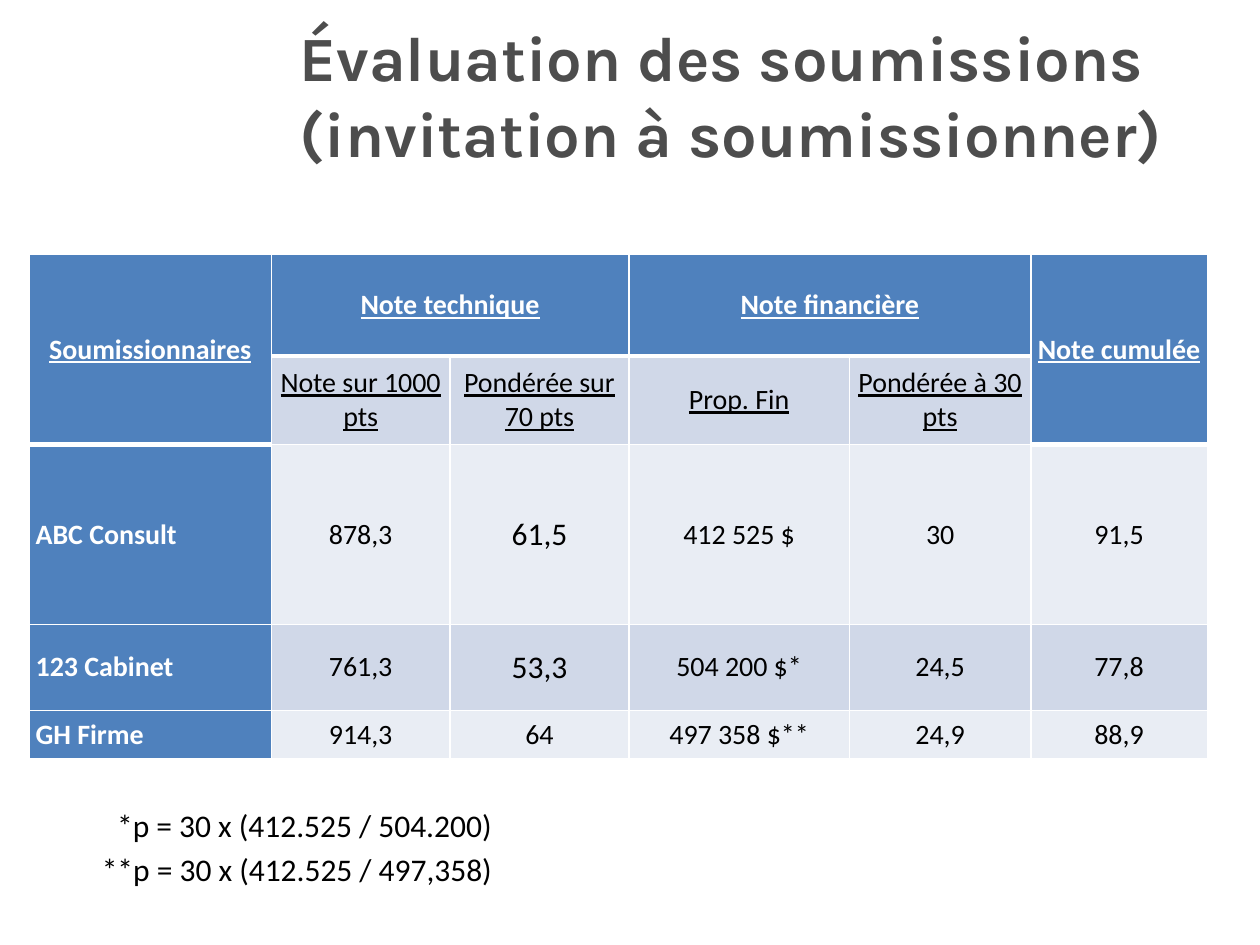
from pptx import Presentation
from pptx.dml.color import RGBColor
from pptx.enum.text import MSO_ANCHOR, MSO_AUTO_SIZE, PP_ALIGN
from pptx.oxml import parse_xml
from pptx.oxml.ns import nsdecls
from pptx.util import Pt

WHITE = RGBColor(0xFF, 0xFF, 0xFF)
BLACK = RGBColor(0x00, 0x00, 0x00)
GREY = RGBColor(0x4D, 0x4D, 0x4D)
BLUE = RGBColor(0x4F, 0x81, 0xBD)
BAND_DARK = RGBColor(0xD0, 0xD8, 0xE8)
BAND_LIGHT = RGBColor(0xE9, 0xED, 0xF4)

COLUMN_WIDTHS = (138.2, 102.2, 102.2, 126, 103.7, 100.8)
ROW_HEIGHTS = (58, 50.4, 103, 49, 28)
SCORES = (
    ("Soumissionnaires", "Note technique", "", "Note financière", "", "Note cumulée"),
    ("", "Note sur 1000 pts", "Pondérée sur 70 pts", "Prop. Fin", "Pondérée à 30 pts", ""),
    ("ABC Consult", "878,3", "61,5", "412 525 $", "30", "91,5"),
    ("123 Cabinet", "761,3", "53,3", "504 200 $*", "24,5", "77,8"),
    ("GH Firme", "914,3", "64", "497 358 $**", "24,9", "88,9"),
)
MERGES = (((0, 0), (1, 0)), ((0, 1), (0, 2)), ((0, 3), (0, 4)), ((0, 5), (1, 5)))
LARGE_SCORES = ("61,5", "53,3")
NOTES = (
    (59.8, 457, 231, "*p = 30 x (412.525 / 504.200)"),
    (51.1, 482, 240.5, "**p = 30 x (412.525 / 497,358)"),
)


class SlideBuilder:
    body_font = "Calibri"
    title_font = "Karla"
    body_size = 16
    note_size = 18

    def __init__(self, slide):
        self.slide = slide

    def format_runs(self, paragraph, font, size, color, bold=False, underline=False):
        for run in paragraph.runs:
            run.font.name = font
            run.font.size = Pt(size)
            run.font.color.rgb = color
            run.font.bold = bold
            run.font.underline = underline

    def text_frame(self, left, top, width, height, text):
        box = self.slide.shapes.add_textbox(Pt(left), Pt(top), Pt(width), Pt(height))
        box.text_frame.text = text
        return box.text_frame

    def title(self, left, top, width, height, text):
        frame = self.text_frame(left, top, width, height, text)
        frame.word_wrap = True
        frame.vertical_anchor = MSO_ANCHOR.BOTTOM
        frame.margin_bottom = Pt(0)
        self.format_runs(frame.paragraphs[0], self.title_font, 36, GREY, bold=True)

    def note(self, left, top, width, text):
        frame = self.text_frame(left, top, width, 29, text)
        frame.word_wrap = False
        frame.auto_size = MSO_AUTO_SIZE.SHAPE_TO_FIT_TEXT
        self.format_runs(frame.paragraphs[0], self.body_font, self.note_size, BLACK)

    def borders(self, cell, bottom):
        """Draw white cell borders; bottom is the lower border's width in points."""
        properties = cell._tc.get_or_add_tcPr()
        for side, width in (("L", 1), ("R", 1), ("T", 1), ("B", bottom)):
            properties.append(parse_xml(
                f'<a:ln{side} {nsdecls("a")} w="{Pt(width)}"><a:solidFill>'
                f'<a:srgbClr val="{WHITE}"/></a:solidFill></a:ln{side}>'))

    def cell(self, cell, text, fill, heading, underline, centred, size, bottom):
        self.borders(cell, bottom)
        cell.fill.solid()
        cell.fill.fore_color.rgb = fill
        cell.vertical_anchor = MSO_ANCHOR.MIDDLE
        cell.margin_left = cell.margin_right = Pt(3.6)
        cell.margin_top = cell.margin_bottom = Pt(0)
        if text:
            cell.text_frame.text = text
        paragraph = cell.text_frame.paragraphs[0]
        paragraph.alignment = PP_ALIGN.CENTER if centred else PP_ALIGN.LEFT
        self.format_runs(paragraph, self.body_font, size,
                         WHITE if heading else BLACK, heading, underline)

    def score_table(self, left, top):
        frame = self.slide.shapes.add_table(
            len(ROW_HEIGHTS), len(COLUMN_WIDTHS), Pt(left), Pt(top),
            Pt(sum(COLUMN_WIDTHS)), Pt(sum(ROW_HEIGHTS)))
        table = frame.table
        for column, width in zip(table.columns, COLUMN_WIDTHS):
            column.width = Pt(width)
        for row, height in zip(table.rows, ROW_HEIGHTS):
            row.height = Pt(height)
        for start, end in MERGES:
            table.cell(*start).merge(table.cell(*end))

        last = len(COLUMN_WIDTHS) - 1
        for r, texts in enumerate(SCORES):
            for c, text in enumerate(texts):
                tall_heading = r < 2 and c in (0, last)
                heading = r == 0 or c == 0 or tall_heading
                band = BAND_DARK if r % 2 else BAND_LIGHT
                self.cell(
                    table.cell(r, c), text,
                    fill=BLUE if heading else band,
                    heading=heading,
                    underline=r < 2,
                    centred=r < 2 or c > 0,
                    size=18 if text in LARGE_SCORES else self.body_size,
                    bottom=3 if r == 0 or tall_heading else 1)


def main():
    presentation = Presentation()
    presentation.slide_width = Pt(720)
    presentation.slide_height = Pt(540)
    builder = SlideBuilder(presentation.slides.add_slide(presentation.slide_layouts[6]))
    builder.title(164, 55, 527, 42, "Évaluation des soumissions (invitation à soumissionner)")
    builder.score_table(16.8, 145.5)
    for note in NOTES:
        builder.note(*note)
    presentation.save("out.pptx")


if __name__ == "__main__":
    main()
